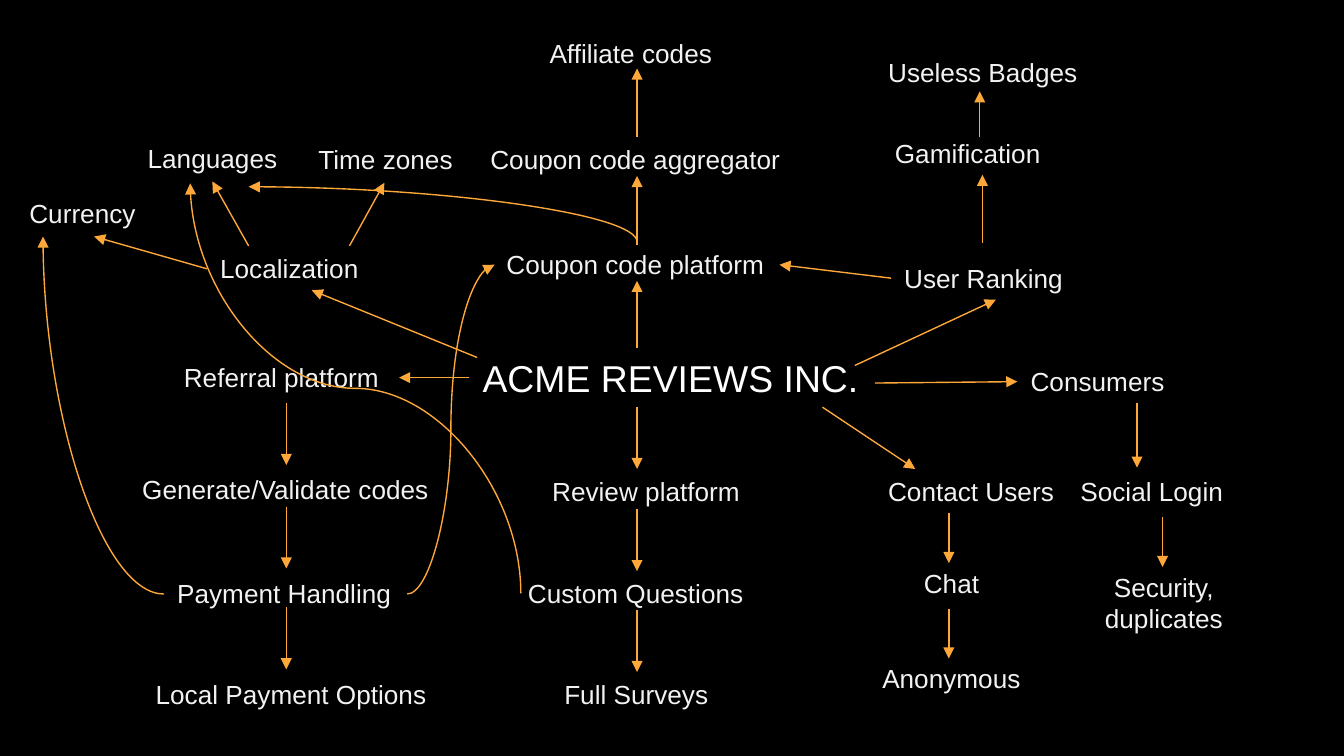
import pptx
import pptx.util
import pptx.dml.color
import pptx.enum.shapes
import pptx.enum.text
import pptx.oxml.ns
from dataclasses import dataclass
from lxml import etree
from pptx.util import Inches


@dataclass(frozen=True)
class Theme:
    background: str = "000000"
    title: str = "FFFFFF"
    label: str = "F2F2F2"
    arrow: str = "FEA83A"
    font: str = "Arial"
    title_size: int = 20
    label_size: int = 14
    line_width: float = 0.75


THEME = Theme()
LABEL_H = 0.34
CENTER_X = 4.74
PAYMENT_X = 2.13
CONTACT_X = 7.06

# Labels on one unwrapped line: text, left, top, width
LINE_LABELS = [
    ("Affiliate codes", 3.99, 0.23, 1.42),
    ("Coupon code aggregator", 3.55, 1.02, 2.37),
    ("Coupon code platform", 3.67, 1.8, 2.13),
    ("Review platform", 4.01, 3.49, 1.61),
    ("Custom Questions", 3.83, 4.25, 1.81),
    ("Full Surveys", 4.1, 5, 1.28),
    ("Useless Badges", 6.51, 0.37, 1.62),
    ("Gamification", 6.56, 0.97, 1.29),
    ("Referral platform", 1.27, 2.64, 1.66),
    ("Generate/Validate codes", 0.96, 3.47, 2.36),
    ("Payment Handling", 1.22, 4.25, 1.8),
    ("Local Payment Options", 1.06, 5, 2.23),
]

# Labels in wrapping boxes, left aligned
BOX_LABELS = [
    ("User Ranking", 6.63, 1.9, 2.13),
    ("Contact Users", 6.51, 3.49, 2.13),
    ("Consumers", 7.57, 2.67, 2.13),
    ("Localization", 1.54, 1.83, 2.13),
    ("Time zones", 2.27, 1.02, 1.21),
    ("Languages", 1, 1.01, 1.21),
    ("Currency", 0.12, 1.42, 1.21),
]

# Labels in wrapping boxes, centred: text, left, top, height
CENTERED_LABELS = [
    ("Chat", 6.36, 4.17, LABEL_H),
    ("Anonymous", 6.36, 4.88, LABEL_H),
    ("Social Login", 7.85, 3.49, LABEL_H),
    ("Security, duplicates", 7.94, 4.2, 0.57),
]
CENTERED_W = 1.44

# Vertical arrows: x, then start and end heights
VERTICAL_ARROWS = [
    (CENTER_X, [(2.59, 2.09), (1.82, 1.31), (1.02, 0.51),
                (3.03, 3.49), (3.79, 4.25), (4.54, 5)]),
    (PAYMENT_X, [(3, 3.46), (3.77, 4.23), (4.52, 4.98)]),
    (CONTACT_X, [(3.82, 4.19), (4.53, 4.9)]),
    (7.31, [(1.81, 1.3)]),
    (7.29, [(1.02, 0.68)]),
    (8.46, [(3, 3.48)]),
    (8.65, [(3.85, 4.22)]),
]

# Other straight arrows: x1, y1, x2, y2
SLANTED_ARROWS = [
    (6.36, 2.72, 7.41, 2.23),   # center to User Ranking
    (6.12, 3.03, 6.81, 3.49),   # center to Contact Users
    (6.51, 2.85, 7.57, 2.84),   # center to Consumers
    (3.49, 2.81, 2.97, 2.81),   # center to Referral platform
    (3.55, 2.66, 2.32, 2.16),   # center to Localization
    (6.63, 2.07, 5.8, 1.97),    # User Ranking to Coupon code platform
    (2.6, 1.83, 2.86, 1.36),    # Localization to Time zones
    (1.85, 1.83, 1.58, 1.35),   # Localization to Languages
    (1.54, 2, 0.7, 1.76),       # Localization to Currency
]

# Curved arrows: preset, left, top, width, height, rotation, vertical flip
CURVED_ARROWS = [
    ("curvedConnector3", 3.03, 1.97, 0.65, 2.45, 0, True),
    ("curvedConnector2", 0.32, 1.76, 0.9, 2.66, 180, False),
    ("curvedConnector3", 1.12, 1.66, 3.05, 2.46, 270, True),
    ("curvedConnector2", 3.09, 0.15, 0.41, 2.89, 270, True),
]


def rgb(value):
    return pptx.dml.color.RGBColor.from_string(value)


def fill_text(shape, text, size, color, wrap, align):
    tf = shape.text_frame
    tf.text = text
    tf.word_wrap = wrap
    tf.auto_size = pptx.enum.text.MSO_AUTO_SIZE.SHAPE_TO_FIT_TEXT
    tf.vertical_anchor = pptx.enum.text.MSO_ANCHOR.TOP
    p = tf.paragraphs[0]
    p.alignment = align
    font = p.runs[0].font
    font.name = THEME.font
    font.size = pptx.util.Pt(size)
    font.color.rgb = rgb(color)


def add_title(s, text, left, top, width, height):
    sp = s.shapes.title
    sp.left, sp.top = Inches(left), Inches(top)
    sp.width, sp.height = Inches(width), Inches(height)
    fill_text(sp, text, THEME.title_size, THEME.title, False,
              pptx.enum.text.PP_ALIGN.LEFT)


def add_label(s, text, left, top, width, height=LABEL_H, wrap=True, centered=False):
    sp = s.shapes.add_textbox(Inches(left), Inches(top), Inches(width), Inches(height))
    align = pptx.enum.text.PP_ALIGN
    fill_text(sp, text, THEME.label_size, THEME.label, wrap,
              align.CENTER if centered else align.LEFT)


def add_arrow(s, x1, y1, x2, y2, kind=pptx.enum.shapes.MSO_CONNECTOR.STRAIGHT):
    cxn = s.shapes.add_connector(kind, Inches(x1), Inches(y1), Inches(x2), Inches(y2))
    cxn.line.color.rgb = rgb(THEME.arrow)
    cxn.line.width = pptx.util.Pt(THEME.line_width)
    qn = pptx.oxml.ns.qn
    sp_pr = cxn._element.spPr
    etree.SubElement(sp_pr.find(qn("a:ln")), qn("a:tailEnd"), type="triangle")
    etree.SubElement(sp_pr, qn("a:effectLst"))
    return cxn


def add_curved_arrow(s, preset, left, top, width, height, rotation, flip):
    cxn = add_arrow(s, left, top, left + width, top + height,
                    pptx.enum.shapes.MSO_CONNECTOR.CURVE)
    qn = pptx.oxml.ns.qn
    sp_pr = cxn._element.spPr
    sp_pr.find(qn("a:prstGeom")).set("prst", preset)
    xfrm = sp_pr.find(qn("a:xfrm"))
    xfrm.set("rot", str(rotation * 60000))
    if flip:
        xfrm.set("flipV", "1")


def main():
    prs = pptx.Presentation()
    # Widescreen, 16:9
    prs.slide_width = Inches(10)
    prs.slide_height = Inches(10 * 9 / 16)
    s = prs.slides.add_slide(prs.slide_layouts[5])
    s.background.fill.solid()
    s.background.fill.fore_color.rgb = rgb(THEME.background)

    # Central topic
    add_title(s, "ACME REVIEWS INC.", 3.49, 2.59, 3.02, 0.44)

    # Topic labels
    for label in LINE_LABELS:
        add_label(s, *label, wrap=False)
    for label in BOX_LABELS:
        add_label(s, *label)
    for text, left, top, height in CENTERED_LABELS:
        add_label(s, text, left, top, CENTERED_W, height, centered=True)

    # Arrows between topics
    for x, spans in VERTICAL_ARROWS:
        for start, end in spans:
            add_arrow(s, x, start, x, end)
    for ends in SLANTED_ARROWS:
        add_arrow(s, *ends)
    for curve in CURVED_ARROWS:
        add_curved_arrow(s, *curve)

    prs.save("out.pptx")


if __name__ == "__main__":
    main()
